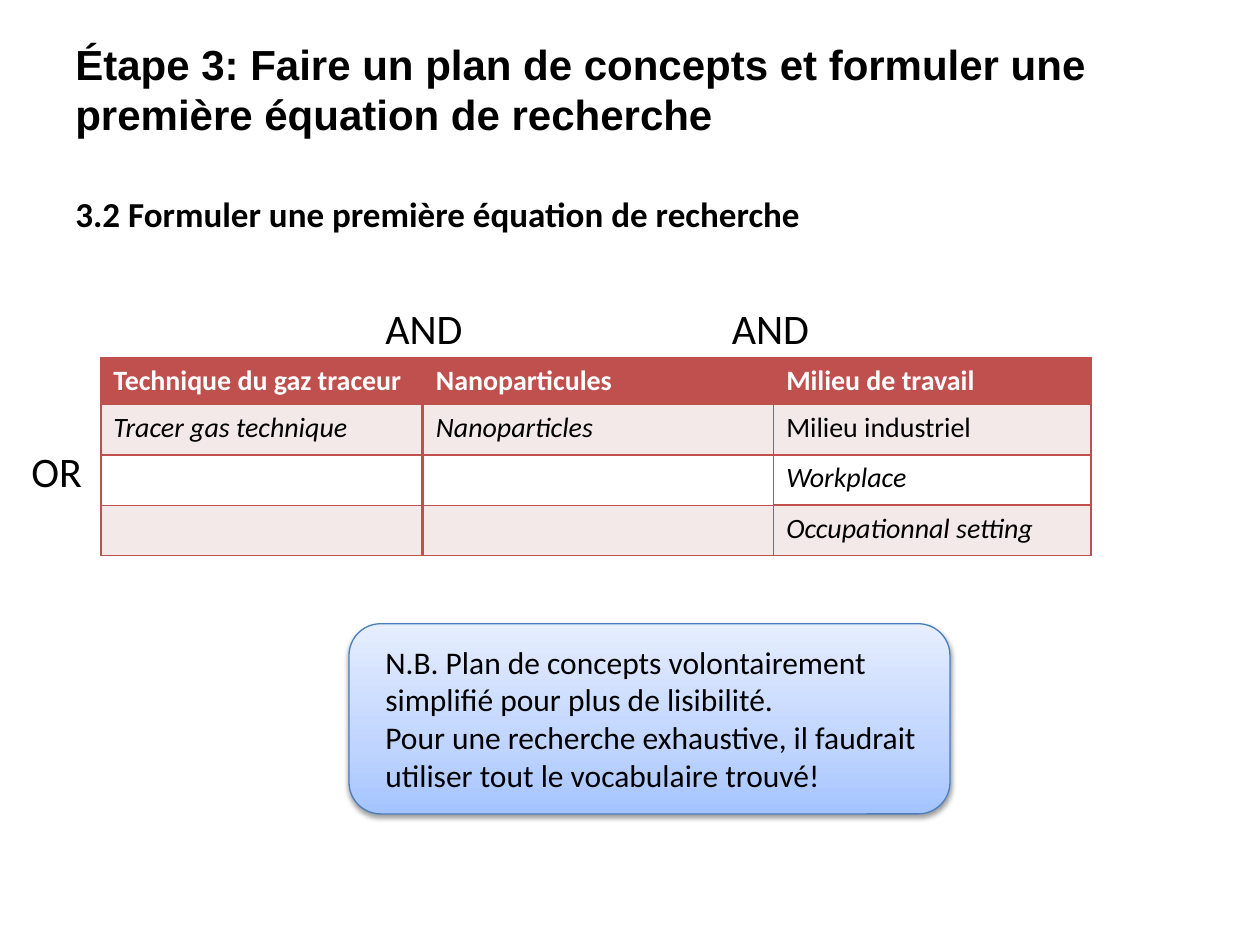
from dataclasses import dataclass

from lxml.etree import SubElement
from pptx import Presentation
from pptx.dml.color import RGBColor
from pptx.enum.shapes import MSO_SHAPE
from pptx.enum.text import MSO_ANCHOR
from pptx.oxml.ns import qn
from pptx.util import Inches, Pt


@dataclass(frozen=True)
class Theme:
    heading_font: str = "Arial"
    body_font: str = "Calibri"
    black: str = "000000"
    white: str = "FFFFFF"
    red: str = "C0504D"
    pale_red: str = "F4E9E9"
    note_line: str = "4B7EBC"
    note_stops: tuple = ((0, "A4C4FF"), (35, "BFD4FF"), (100, "E6EEFF"))
    title_size: int = 24
    subtitle_size: int = 20
    operator_size: int = 24
    note_size: int = 18
    cell_size: int = 16


THEME = Theme()


def rgb(value):
    return RGBColor.from_string(value)


def add_run(paragraph, text, size, color=THEME.black, font=THEME.body_font,
            bold=False, italic=False):
    run = paragraph.add_run()
    run.text = text
    run.font.size = Pt(size)
    run.font.name = font
    run.font.color.rgb = rgb(color)
    run.font.bold = bold
    run.font.italic = italic


def add_text(slide, box, lines, size, anchor=MSO_ANCHOR.TOP, wrap=True, **style):
    shape = slide.shapes.add_textbox(*map(Inches, box))
    frame = shape.text_frame
    frame.word_wrap = wrap
    frame.vertical_anchor = anchor
    paragraph = frame.paragraphs[0]
    for index, line in enumerate(lines):
        if index:
            paragraph.add_line_break()
        add_run(paragraph, line, size, **style)
    return paragraph


def add_color(parent, value):
    return SubElement(parent, qn("a:srgbClr"), val=value)


def set_borders(cell, color, width):
    properties = cell._tc.get_or_add_tcPr()
    for position, side in enumerate(("a:lnL", "a:lnR", "a:lnT", "a:lnB")):
        line = SubElement(properties, qn(side), w=str(Pt(width)))
        add_color(SubElement(line, qn("a:solidFill")), color)
        properties.remove(line)
        properties.insert(position, line)  # borders come before the fill


def add_concept_table(slide, left, width, header, terms):
    """One concept: a header and three rows of (term, italic)."""
    heights = [0.37, 0.4, 0.4, 0.4]
    table = slide.shapes.add_table(
        len(heights), 1, Inches(left), Inches(2.84),
        Inches(width), Inches(sum(heights))).table
    for index, height in enumerate(heights):
        table.rows[index].height = Inches(height)
        cell = table.cell(index, 0)
        fill = THEME.pale_red if index % 2 else THEME.white
        cell.fill.solid()
        cell.fill.fore_color.rgb = rgb(fill if index else THEME.red)
        set_borders(cell, THEME.red, 1)
        paragraph = cell.text_frame.paragraphs[0]
        if index == 0:
            add_run(paragraph, header, THEME.cell_size, THEME.white, bold=True)
        elif index <= len(terms):
            term, italic = terms[index - 1]
            add_run(paragraph, term, THEME.cell_size, italic=italic)


def add_note_panel(slide, box):
    shape = slide.shapes.add_shape(MSO_SHAPE.ROUNDED_RECTANGLE, *map(Inches, box))
    properties = shape._element.spPr
    # Gradient running upwards
    gradient = SubElement(properties, qn("a:gradFill"), rotWithShape="1")
    stops = SubElement(gradient, qn("a:gsLst"))
    for percent, color in THEME.note_stops:
        add_color(SubElement(stops, qn("a:gs"), pos=str(percent * 1000)), color)
    SubElement(gradient, qn("a:lin"), ang=str(270 * 60000), scaled="0")
    shape.line.color.rgb = rgb(THEME.note_line)
    shape.line.width = Pt(0.75)
    # Soft shadow below
    shape.shadow.inherit = False
    shadow = SubElement(
        properties.find(qn("a:effectLst")), qn("a:outerShdw"),
        blurRad=str(Pt(3.1)), dist=str(Pt(1.6)), dir=str(90 * 60000), rotWithShape="0")
    SubElement(add_color(shadow, THEME.black), qn("a:alpha"), val="38000")


def main():
    presentation = Presentation()
    presentation.slide_width = Inches(10)
    presentation.slide_height = Inches(7.5)
    slide = presentation.slides.add_slide(presentation.slide_layouts[6])

    # Subtitle
    subtitle = add_text(slide, (0.5, 1.48, 9, 6.02),
                        ["3.2 Formuler une première équation de recherche"],
                        THEME.subtitle_size, bold=True)
    subtitle.space_before = Pt(4)

    # Concept plan
    concepts = [
        (0.8, 2.55, "Technique du gaz traceur", [("Tracer gas technique", True)]),
        (3.36, 2.78, "Nanoparticules", [("Nanoparticles", True)]),
        (6.14, 2.52, "Milieu de travail",
         [("Milieu industriel", False), ("Workplace", True),
          ("Occupationnal setting", True)]),
    ]
    for concept in concepts:
        add_concept_table(slide, *concept)

    # Boolean operators
    operators = [("OR", 0.15, 3.49, 0.71), ("AND", 2.96, 2.35, 0.85),
                 ("AND", 5.71, 2.35, 0.85)]
    for text, left, top, width in operators:
        add_text(slide, (left, top, width, 0.5), [text], THEME.operator_size)

    # Note
    add_note_panel(slide, (2.77, 4.95, 4.77, 1.51))
    add_text(slide, (2.96, 5.05, 4.56, 1.31),
             ["N.B. Plan de concepts volontairement simplifié pour plus de lisibilité.",
              "Pour une recherche exhaustive, il faudrait utiliser tout le "
              "vocabulaire trouvé!"],
             THEME.note_size)

    # Title
    add_text(slide, (0.5, 0.08, 9, 1.25),
             ["Étape 3: Faire un plan de concepts et formuler une première "
              "équation de recherche"],
             THEME.title_size, MSO_ANCHOR.MIDDLE, font=THEME.heading_font, bold=True)

    presentation.save("out.pptx")


if __name__ == "__main__":
    main()
